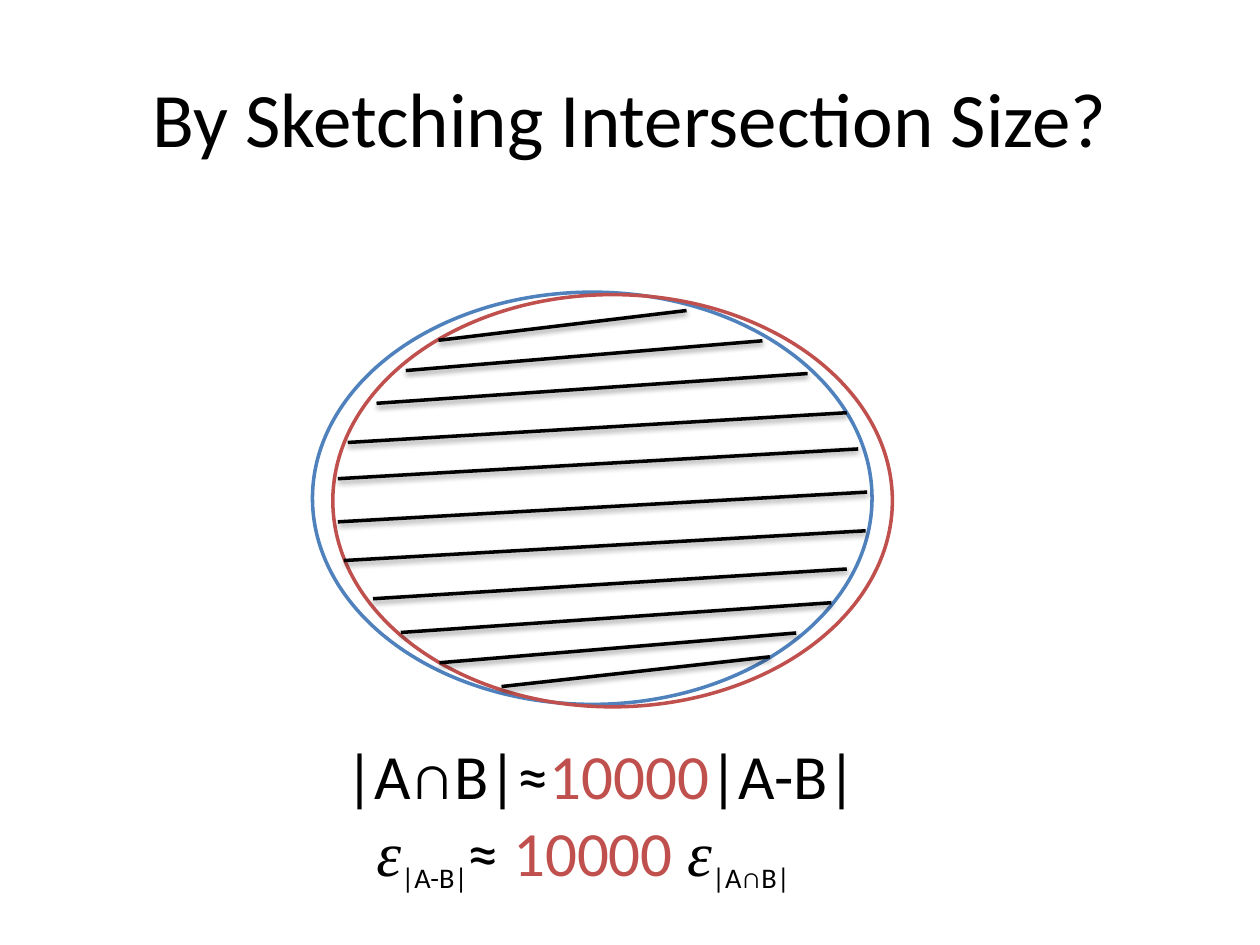
from lxml import etree
from pptx import Presentation
from pptx.dml.color import RGBColor
from pptx.enum.shapes import MSO_CONNECTOR, MSO_SHAPE
from pptx.enum.text import MSO_ANCHOR, MSO_AUTO_SIZE, PP_ALIGN
from pptx.util import Cm, Pt

BLACK = RGBColor(0x00, 0x00, 0x00)
WHITE = RGBColor(0xFF, 0xFF, 0xFF)
BLUE = RGBColor(0x4F, 0x81, 0xBD)
RED = RGBColor(0xC0, 0x50, 0x4D)
SHADOW = (
    '<a:effectLst xmlns:a="http://schemas.openxmlformats.org/drawingml/2006/main">'
    '<a:outerShdw blurRad="40000" dist="20000" dir="5400000" rotWithShape="0">'
    '<a:srgbClr val="000000"><a:alpha val="38000"/></a:srgbClr>'
    '</a:outerShdw></a:effectLst>'
)

presentation = Presentation()
presentation.slide_width = Cm(25.4)
presentation.slide_height = Cm(19.05)
slide = presentation.slides.add_slide(presentation.slide_layouts[6])

title = slide.shapes.add_textbox(Cm(1.27), Cm(0.76), Cm(22.86), Cm(3.18))
title.text_frame.word_wrap = True
title.text_frame.vertical_anchor = MSO_ANCHOR.MIDDLE
paragraph = title.text_frame.paragraphs[0]
paragraph.text = "By Sketching Intersection Size?"
paragraph.alignment = PP_ALIGN.CENTER
paragraph.font.size = Pt(44)
paragraph.font.name = "Calibri"
paragraph.font.color.rgb = BLACK

for left, top, color, filled in [(6.3, 5.89, BLUE, True), (6.71, 5.94, RED, False)]:
    ellipse = slide.shapes.add_shape(MSO_SHAPE.OVAL, Cm(left), Cm(top), Cm(11.28), Cm(8.31))
    ellipse.shadow.inherit = False
    ellipse.line.color.rgb = color
    ellipse.line.width = Pt(2)
    if filled:
        ellipse.fill.solid()
        ellipse.fill.fore_color.rgb = WHITE
    else:
        ellipse.fill.background()

hatch_rise = 0.6
hatch_lines = [
    (8.84, 13.84, 6.86),
    (8.18, 15.37, 7.47),
    (7.59, 16.28, 8.13),
    (7.01, 17.07, 8.92),
    (6.81, 17.3, 9.65),
    (6.81, 17.48, 10.52),
    (6.93, 17.45, 11.3),
    (7.52, 17.07, 12.07),
    (8.08, 16.76, 12.75),
    (8.86, 16.05, 13.36),
    (10.11, 15.52, 13.84),
]
for left, right, bottom in hatch_lines:
    hatch = slide.shapes.add_connector(
        MSO_CONNECTOR.STRAIGHT, Cm(left), Cm(bottom), Cm(right), Cm(bottom - hatch_rise)
    )
    hatch.line.color.rgb = BLACK
    hatch.line.width = Pt(2)
    hatch._element.spPr.append(etree.fromstring(SHADOW))

formulas = [
    (6.71, 14.73, 10.95, [
        ("|A∩B|≈", BLACK, "plain"),
        ("10000", RED, "plain"),
        ("|A-B|", BLACK, "plain"),
    ]),
    (7.34, 16.28, 9.5, [
        ("ε", BLACK, "symbol"),
        ("|A-B|", BLACK, "subscript"),
        ("≈ ", BLACK, "plain"),
        ("10000 ", RED, "plain"),
        ("ε", BLACK, "symbol"),
        ("|A∩B|", BLACK, "subscript"),
    ]),
]
for left, top, width, parts in formulas:
    formula = slide.shapes.add_textbox(Cm(left), Cm(top), Cm(width), Cm(1.8))
    formula.text_frame.word_wrap = False
    formula.text_frame.auto_size = MSO_AUTO_SIZE.SHAPE_TO_FIT_TEXT
    paragraph = formula.text_frame.paragraphs[0]
    for text, color, style in parts:
        run = paragraph.add_run()
        run.text = text
        run.font.size = Pt(28 if style == "subscript" else 36)
        run.font.name = "Times New Roman" if style == "symbol" else "Calibri"
        run.font.italic = style == "symbol"
        run.font.color.rgb = color
        if style == "subscript":
            run.font._element.set("baseline", "-25000")

presentation.save("out.pptx")
